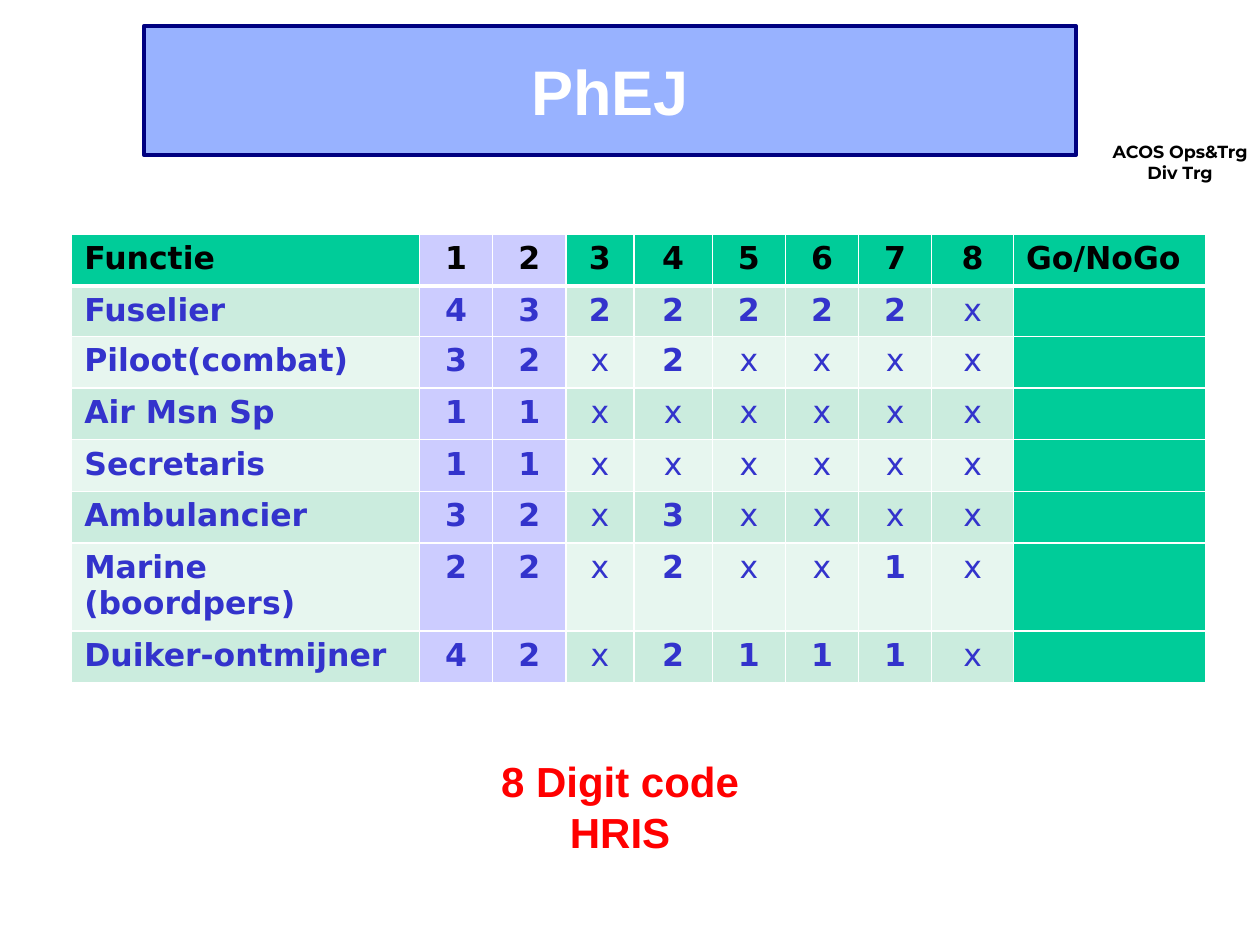
from lxml import etree
from pptx import Presentation
from pptx.dml.color import RGBColor
from pptx.enum.shapes import MSO_SHAPE
from pptx.enum.text import MSO_ANCHOR, PP_ALIGN
from pptx.oxml.ns import qn
from pptx.util import Pt

RECT = MSO_SHAPE.RECTANGLE
MIDDLE = MSO_ANCHOR.MIDDLE
LEFT, CENTER = PP_ALIGN.LEFT, PP_ALIGN.CENTER

COLORS = {
    "black": "000000", "white": "FFFFFF", "blue": "3366FF", "navy": "000080",
    "green": "00CC99", "lilac": "CCCCFF", "mint": "CBECDE", "pale": "E7F6EF",
    "ink": "3333CC", "red": "FF0000",
}
ROWS = [
    ("Functie", "12345678", "Go/NoGo"),
    ("Fuselier", "4322222x", ""),
    ("Piloot(combat)", "32x2xxxx", ""),
    ("Air Msn Sp", "11xxxxxx", ""),
    ("Secretaris", "11xxxxxx", ""),
    ("Ambulancier", "32x3xxxx", ""),
    ("Marine (boordpers)", "22x2xx1x", ""),
    ("Duiker-ontmijner", "42x2111x", ""),
]
WIDTHS = [198.8, 41.8, 41.8, 38.9, 44.8, 41.8, 41.8, 41.8, 46.8, 110]
HEIGHTS = [29.5, 27.5, 29.5, 29.5, 29.5, 29.5, 49, 29.5]


def rgb(name):
    return RGBColor.from_string(COLORS[name])


class Board:
    def __init__(self, slide):
        self.slide = slide

    def style(self, frame, size, font, color, bold=True, align=CENTER):
        for para in frame.paragraphs:
            para.alignment = align
            for run in para.runs:
                run.font.size = Pt(size)
                run.font.name = font
                run.font.bold = bold
                run.font.color.rgb = rgb(color)

    def text(self, box, words, size, font, color, wrap=True):
        frame = self.slide.shapes.add_textbox(*map(Pt, box)).text_frame
        frame.word_wrap = wrap
        frame.text = words
        self.style(frame, size, font, color)

    def title(self, box, words):
        shape = self.slide.shapes.add_shape(RECT, *map(Pt, box))
        shape.shadow.inherit = False
        shape.fill.solid()
        shape.fill.fore_color.rgb = rgb("blue")
        tint = shape.fill._xPr.find(qn("a:solidFill"))[0]
        etree.SubElement(tint, qn("a:alpha"), val="50000")
        shape.line.color.rgb = rgb("navy")
        shape.line.width = Pt(2.25)
        frame = shape.text_frame
        frame.vertical_anchor = MIDDLE
        frame.text = words
        self.style(frame, 36, "Arial", "white")

    def edges(self, cell, row):
        props = cell._tc.get_or_add_tcPr()
        thick = {0: "lnB", 1: "lnT"}.get(row)
        for spot, side in enumerate(("lnL", "lnR", "lnT", "lnB")):
            width = Pt(3 if side == thick else 1)
            line = etree.Element(qn("a:" + side), w=str(width))
            fill = etree.SubElement(line, qn("a:solidFill"))
            etree.SubElement(fill, qn("a:srgbClr"), val=COLORS["white"])
            props.insert(spot, line)

    def cell(self, cell, row, col, words):
        last = len(WIDTHS) - 1
        if col in (1, 2):
            fill = "lilac"
        elif row == 0 or col == last:
            fill = "green"
        else:
            fill = "mint" if row % 2 else "pale"
        cell.fill.solid()
        cell.fill.fore_color.rgb = rgb(fill)
        self.edges(cell, row)
        if not words:
            cell.margin_top = cell.margin_bottom = 0
            return
        cell.text_frame.text = words
        self.style(cell.text_frame, 18, "DejaVu Sans",
                   "ink" if row else "black", words != "x",
                   LEFT if col in (0, last) else CENTER)

    def table(self, left, top):
        shape = self.slide.shapes.add_table(
            len(ROWS), len(WIDTHS), Pt(left), Pt(top),
            Pt(sum(WIDTHS)), Pt(sum(HEIGHTS)))
        table = shape.table
        for col, width in zip(table.columns, WIDTHS):
            col.width = Pt(width)
        for row, height in zip(table.rows, HEIGHTS):
            row.height = Pt(height)
        for row, (role, code, end) in enumerate(ROWS):
            for col, words in enumerate((role, *code, end)):
                self.cell(table.cell(row, col), row, col, words)


def main():
    deck = Presentation()
    deck.slide_width, deck.slide_height = Pt(720), Pt(540)
    board = Board(deck.slides.add_slide(deck.slide_layouts[6]))
    board.text((625.7, 77, 97.2, 31), "ACOS Ops&Trg\nDiv Trg",
               10, "Montserrat", "black", False)
    board.title((82.2, 15, 532.8, 73.5), "PhEJ")
    board.table(41, 134)
    board.text((257.8, 428.4, 193, 65.5), "8 Digit code HRIS",
               24, "Arial", "red")
    deck.save("out.pptx")


if __name__ == "__main__":
    main()
